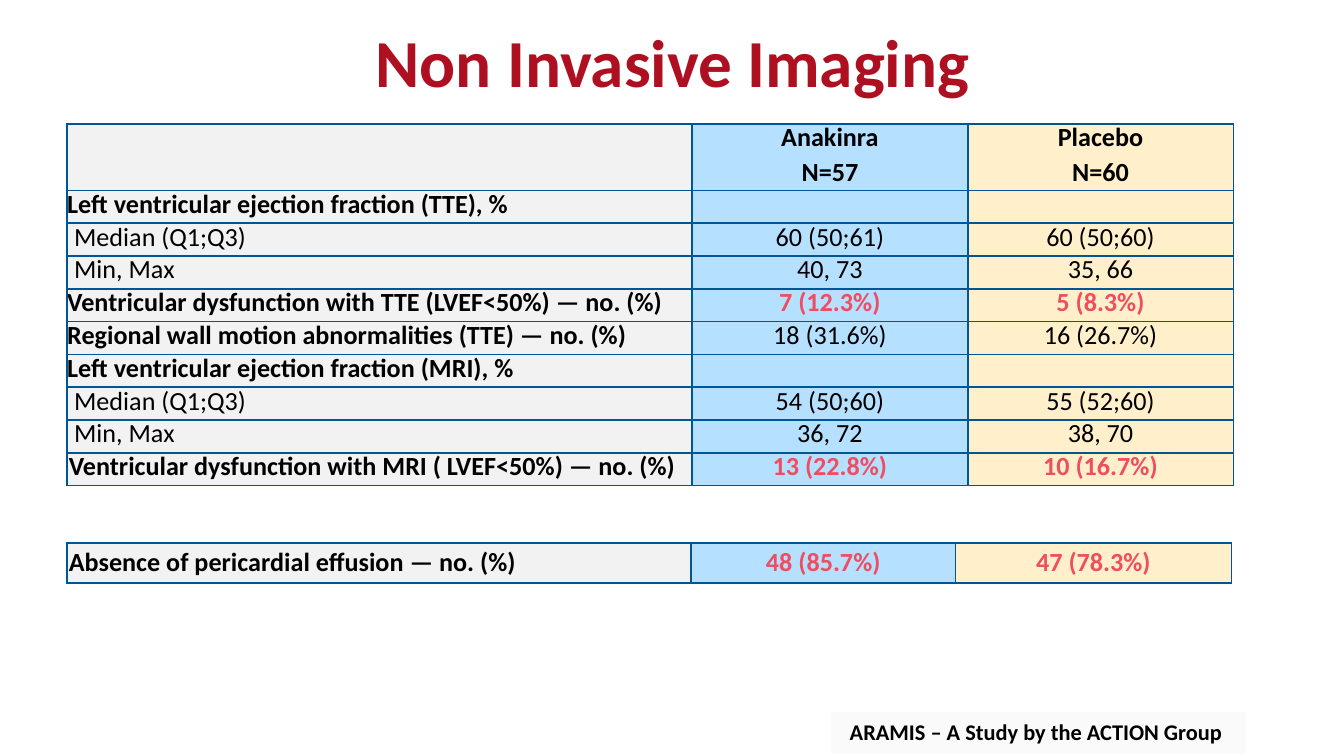
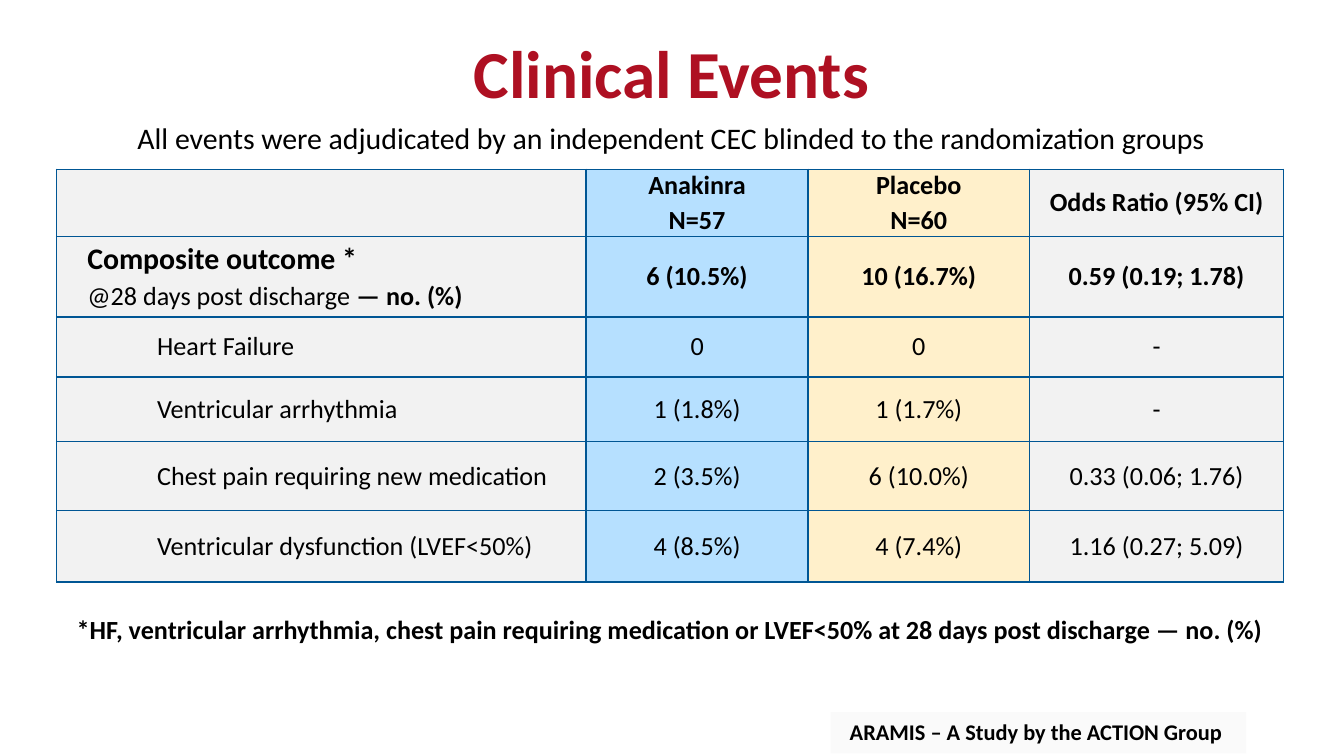
from lxml.etree import SubElement
from pptx import Presentation
from pptx.dml.color import RGBColor
from pptx.enum.shapes import MSO_SHAPE as SHAPE
from pptx.enum.text import MSO_ANCHOR as ANCHOR, PP_ALIGN as ALIGN
from pptx.oxml.ns import qn
from pptx.util import Cm, Pt

WHITE = RGBColor(0xFF, 0xFF, 0xFF)
BLACK = RGBColor(0x00, 0x00, 0x00)
CRIMSON = RGBColor(0xAE, 0x10, 0x22)
CORAL = RGBColor(0xEF, 0x4D, 0x60)
GREY = RGBColor(0xF2, 0xF2, 0xF2)
BAND = RGBColor(0xFA, 0xFA, 0xFA)
BLUE = RGBColor(0xB6, 0xE0, 0xFF)
CREAM = RGBColor(0xFF, 0xF0, 0xCB)
BORDER = RGBColor(0x00, 0x56, 0x94)

PLAIN = {"name": "Calibri", "size": Pt(14), "bold": False, "color": BLACK}
BOLD = {**PLAIN, "bold": True}
ALERT = {**BOLD, "color": CORAL}
TITLE = {**BOLD, "size": Pt(36), "color": CRIMSON}
SUBTITLE = {**PLAIN, "size": Pt(16)}
OUTCOME = {**BOLD, "size": Pt(16)}
FOOTER = {**BOLD, "size": Pt(12)}

ANAKINRA = "Anakinra\nN=57"
PLACEBO = "Placebo\nN=60"

IMAGING_ROWS = [
    (["", ANAKINRA, PLACEBO], BOLD, BOLD, 0),
    (["Left ventricular ejection fraction (TTE), %", "", ""], BOLD, PLAIN, 0),
    (["Median (Q1;Q3)", "60 (50;61)", "60 (50;60)"], PLAIN, PLAIN, 0.13),
    (["Min, Max", "40, 73", "35, 66"], PLAIN, PLAIN, 0.13),
    (["Ventricular dysfunction with TTE (LVEF<50%) — no. (%)",
      "7 (12.3%)", "5 (8.3%)"], BOLD, ALERT, 0),
    (["Regional wall motion abnormalities (TTE) — no. (%)",
      "18 (31.6%)", "16 (26.7%)"], BOLD, PLAIN, 0),
    (["Left ventricular ejection fraction (MRI), %", "", ""], BOLD, PLAIN, 0),
    (["Median (Q1;Q3)", "54 (50;60)", "55 (52;60)"], PLAIN, PLAIN, 0.13),
    (["Min, Max", "36, 72", "38, 70"], PLAIN, PLAIN, 0.13),
    (["Ventricular dysfunction with MRI ( LVEF<50%) — no. (%)",
      "13 (22.8%)", "10 (16.7%)"], BOLD, ALERT, 0.03),
]
EFFUSION_ROWS = [
    (["Absence of pericardial effusion — no. (%)", "48 (85.7%)", "47 (78.3%)"],
     BOLD, ALERT, 0.03),
]
COMPOSITE = [
    [("Composite outcome *", OUTCOME)],
    [("@28 days post discharge ", PLAIN), ("— no. (%)", BOLD)],
]
EVENT_ROWS = [
    (["", ANAKINRA, PLACEBO, "Odds Ratio (95% CI)"], BOLD, BOLD, 0),
    ([COMPOSITE, "6 (10.5%)", "10 (16.7%)", "0.59 (0.19; 1.78)"], BOLD, BOLD, 0.58),
    (["Heart Failure", "0", "0", "-"], PLAIN, PLAIN, 1.9),
    (["Ventricular arrhythmia", "1 (1.8%)", "1 (1.7%)", "-"], PLAIN, PLAIN, 1.9),
    (["Chest pain requiring new medication", "2 (3.5%)", "6 (10.0%)",
      "0.33 (0.06; 1.76)"], PLAIN, PLAIN, 1.9),
    (["Ventricular dysfunction (LVEF<50%)", "4 (8.5%)", "4 (7.4%)",
      "1.16 (0.27; 5.09)"], PLAIN, PLAIN, 1.9),
]


def as_paragraphs(text, fmt):
    return [[(line, fmt)] for line in text.split("\n")]


def write(tf, paragraphs, align=ALIGN.LEFT, indent=0, gap=0, line=None):
    for i, runs in enumerate(paragraphs):
        p = tf.add_paragraph() if i else tf.paragraphs[0]
        p.alignment = align
        p._p.get_or_add_pPr().set("marL", str(int(Cm(indent))))
        if i:
            p.space_before = Pt(gap)
        elif line:
            p.line_spacing = Pt(line)
        for text, fmt in runs:
            if not text:
                p._p.get_or_add_endParaRPr().set("sz", str(int(fmt["size"].pt * 100)))
                continue
            r = p.add_run()
            r.text = text
            for key, value in fmt.items():
                if key == "color":
                    r.font.color.rgb = value
                else:
                    setattr(r.font, key, value)


def add_text(s, box, paragraphs, **layout):
    tf = s.shapes.add_textbox(*map(Cm, box)).text_frame
    tf.word_wrap = True
    for side, inset in {"left": 0, "top": 0.03, "right": 0, "bottom": 0}.items():
        setattr(tf, f"margin_{side}", Cm(inset))
    write(tf, paragraphs, **layout)


def add_footer(s, box):
    left, top, width, height = box
    band = s.shapes.add_shape(SHAPE.RECTANGLE, *map(Cm, box))
    band.shadow.inherit = False
    band.fill.solid()
    band.fill.fore_color.rgb = BAND
    band.line.fill.background()
    add_text(s, (left + 0.33, top + 0.08, width - 0.71, height - 0.2),
             as_paragraphs("ARAMIS – A Study by the ACTION Group", FOOTER), indent=0.03)


def add_title(s, box, title, subtitle=None):
    paragraphs = [[(title, TITLE)]]
    if subtitle:
        paragraphs.append([(subtitle, SUBTITLE)])
    add_text(s, box, paragraphs, align=ALIGN.CENTER, gap=4)


def style_cell(cell, color, anchor):
    for side in ("left", "top", "right", "bottom"):
        setattr(cell, f"margin_{side}", 0)
    cell.vertical_anchor = anchor
    tc_pr = cell._tc.get_or_add_tcPr()
    for tag in ("a:lnL", "a:lnR", "a:lnT", "a:lnB"):
        ln = SubElement(tc_pr, qn(tag), w=str(int(Pt(1))))
        SubElement(SubElement(ln, qn("a:solidFill")), qn("a:srgbClr"), val=str(BORDER))
    cell.fill.solid()
    cell.fill.fore_color.rgb = color


def add_data_table(s, left, top, widths, heights, rows, anchor=ANCHOR.MIDDLE, line=None):
    size = (sum(widths), sum(heights))
    table = s.shapes.add_table(len(rows), len(widths),
                               *map(Cm, (left, top, *size))).table
    table.first_row = table.horz_banding = False
    for column, width in zip(table.columns, widths):
        column.width = Cm(width)
    for row, height, (values, label_fmt, value_fmt, indent) in zip(table.rows, heights, rows):
        row.height = Cm(height)
        for i, (cell, value, color) in enumerate(
                zip(row.cells, values, (GREY, BLUE, CREAM, GREY))):
            style_cell(cell, color, anchor)
            if isinstance(value, str):
                value = as_paragraphs(value, value_fmt if i else label_fmt)
            write(cell.text_frame, value, gap=1.5, line=line,
                  align=ALIGN.CENTER if i else ALIGN.LEFT, indent=0 if i else indent)


def add_base(prs):
    s = prs.slides.add_slide(prs.slide_layouts[6])
    s.background.fill.solid()
    s.background.fill.fore_color.rgb = WHITE
    add_footer(s, (15.7, 13.46, 7.85, 0.78))
    return s


def imaging_slide(prs):
    s = add_base(prs)
    add_title(s, (7.04, 0.36, 11.35, 1.6), "Non Invasive Imaging")
    add_data_table(s, 1.27, 2.34, [11.81, 5.21, 5.02], [1.26] + [0.62] * 9,
                   IMAGING_ROWS, anchor=ANCHOR.TOP, line=16)
    add_data_table(s, 1.27, 10.26, [11.79, 5, 5.21], [0.76], EFFUSION_ROWS)


def events_slide(prs):
    s = add_base(prs)
    add_title(s, (2.49, 0.56, 20.4, 2.39), "Clinical Events",
              "All events were adjudicated by an independent CEC blinded to the "
              "randomization groups")
    add_data_table(s, 1.07, 3.2, [10.01, 4.19, 4.19, 4.8],
                   [1.27, 1.52, 1.14, 1.22, 1.3, 1.35], EVENT_ROWS)
    add_text(s, (1.42, 11.56, 22.58, 0.66), as_paragraphs(
        "*HF, ventricular arrhythmia, chest pain requiring medication or LVEF<50% "
        "at 28 days post discharge — no. (%)", BOLD), indent=0.03)


def main():
    prs = Presentation()
    prs.slide_width, prs.slide_height = Cm(25.4), Cm(14.29)
    imaging_slide(prs)
    events_slide(prs)
    prs.save("out.pptx")


if __name__ == "__main__":
    main()
